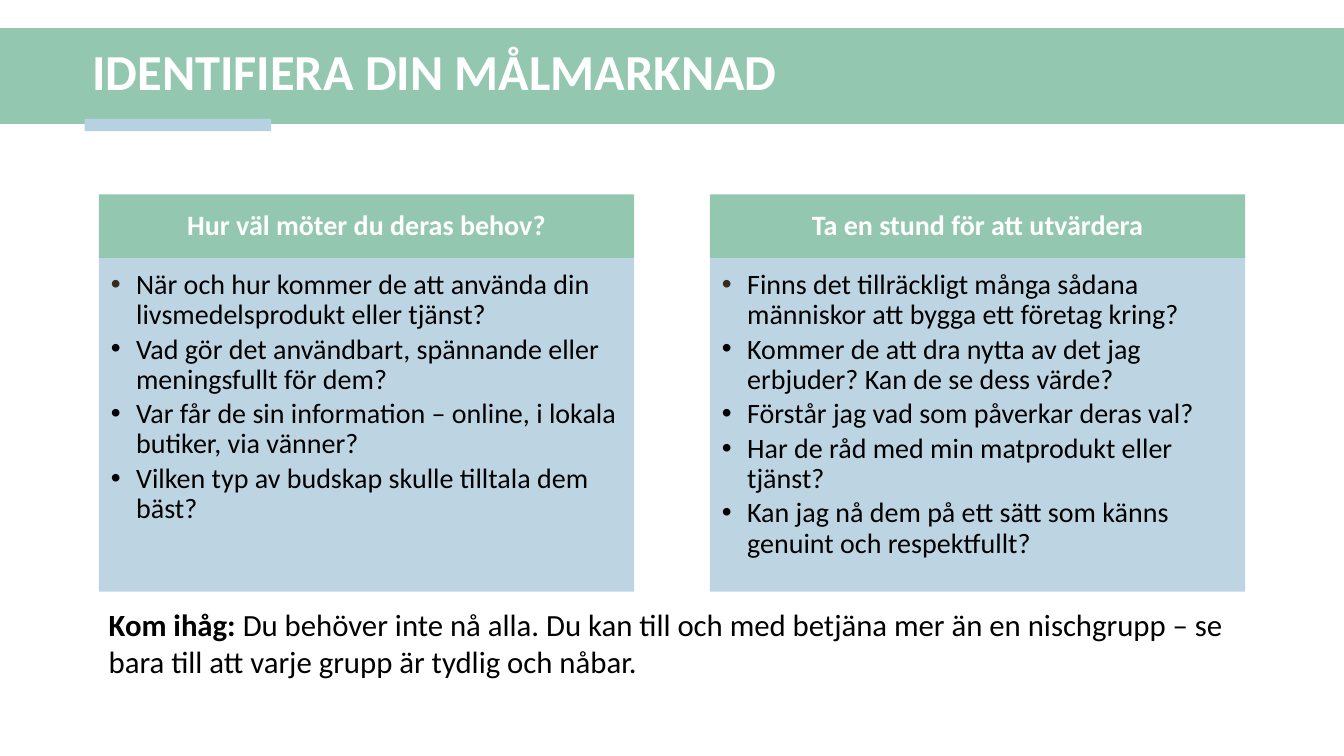
from lxml import etree
from pptx import Presentation
from pptx.dml.color import RGBColor
from pptx.enum.shapes import MSO_SHAPE
from pptx.enum.text import MSO_ANCHOR, PP_ALIGN
from pptx.oxml.ns import qn
from pptx.util import Inches, Pt

RECTANGLE = MSO_SHAPE.RECTANGLE
TOP, MIDDLE = MSO_ANCHOR.TOP, MSO_ANCHOR.MIDDLE
LEFT, CENTER = PP_ALIGN.LEFT, PP_ALIGN.CENTER

FONT = "Calibri"
GREEN, BLUE, WHITE, BLACK, BROWN = "94C7B0", "B6D1E1", "FFFFFF", "000000", "382B1B"

CARD_LEFT, CARD_TOP, CARD_WIDTH, CARD_STEP = 0.98, 1.93, 5.31, 6.06
HEADING_HEIGHT, BODY_HEIGHT = 0.63, 3.31

CARDS = [
    ("Hur väl möter du deras behov?", [
        "När och hur kommer de att använda din livsmedelsprodukt eller tjänst?",
        "Vad gör det användbart, spännande eller meningsfullt för dem?",
        "Var får de sin information – online, i lokala butiker, via vänner?",
        "Vilken typ av budskap skulle tilltala dem bäst?",
    ]),
    ("Ta en stund för att utvärdera", [
        "Finns det tillräckligt många sådana människor att bygga ett företag kring?",
        "Kommer de att dra nytta av det jag erbjuder? Kan de se dess värde?",
        "Förstår jag vad som påverkar deras val?",
        "Har de råd med min matprodukt eller tjänst?",
        "Kan jag nå dem på ett sätt som känns genuint och respektfullt?",
    ]),
]


def color(hex_value):
    return RGBColor.from_string(hex_value)


def add_rectangle(slide, left, top, width, height, fill):
    shape = slide.shapes.add_shape(
        RECTANGLE, Inches(left), Inches(top), Inches(width), Inches(height))
    shape.shadow.inherit = False
    shape.fill.solid()
    shape.fill.fore_color.rgb = color(fill)
    shape.line.fill.background()
    return shape


def add_text_box(slide, left, top, width, height):
    return slide.shapes.add_textbox(
        Inches(left), Inches(top), Inches(width), Inches(height))


def set_frame(shape, anchor, margins):
    frame = shape.text_frame
    frame.word_wrap = True
    frame.vertical_anchor = anchor
    (frame.margin_left, frame.margin_top,
     frame.margin_right, frame.margin_bottom) = map(Inches, margins)
    return frame


def format_run(run, size, text_color, bold=False):
    run.font.name = FONT
    run.font.size = Pt(size)
    run.font.bold = bold
    run.font.color.rgb = color(text_color)


def set_opacity(shape, percent):
    solid_color = shape.fill._xPr.find(qn("a:solidFill"))[0]
    etree.SubElement(solid_color, qn("a:alpha"), val=str(percent * 1000))


def add_bullet(paragraph, bullet_color):
    properties = paragraph._p.get_or_add_pPr()
    properties.set("marL", str(Inches(0.25)))
    properties.set("indent", str(-Inches(0.25)))
    holder = etree.SubElement(properties, qn("a:buClr"))
    etree.SubElement(holder, qn("a:srgbClr"), val=bullet_color)
    etree.SubElement(properties, qn("a:buFont"), typeface="Arial")
    etree.SubElement(properties, qn("a:buChar"), char="•")


def add_title(slide, text):
    add_rectangle(slide, 0, 0.28, 13.33, 0.95, GREEN)
    add_rectangle(slide, 0.84, 1.18, 1.85, 0.12, BLUE)
    box = add_text_box(slide, 0.82, 0.34, 11.93, 0.79)
    frame = set_frame(box, MIDDLE, (0.1, 0.05, 0.1, 0.05))
    frame.text = text
    paragraph = frame.paragraphs[0]
    paragraph.line_spacing = 0.9
    format_run(paragraph.runs[0], 36, WHITE, True)


def add_card(slide, left, heading, questions):
    header = add_rectangle(slide, left, CARD_TOP, CARD_WIDTH, HEADING_HEIGHT, GREEN)
    frame = set_frame(header, MIDDLE, (0.16, 0.09, 0.16, 0.09))
    frame.text = heading
    paragraph = frame.paragraphs[0]
    paragraph.alignment = CENTER
    paragraph.line_spacing = 0.9
    format_run(paragraph.runs[0], 20, WHITE, True)

    body = add_rectangle(
        slide, left, CARD_TOP + HEADING_HEIGHT, CARD_WIDTH, BODY_HEIGHT, BLUE)
    set_opacity(body, 90)
    frame = set_frame(body, TOP, (0.12, 0.12, 0.16, 0.17))
    frame.text = "\n".join(questions)
    for index, paragraph in enumerate(frame.paragraphs):
        add_bullet(paragraph, BLACK if index else BROWN)
        paragraph.alignment = LEFT
        paragraph.line_spacing = 0.9
        paragraph.space_after = Pt(3)
        format_run(paragraph.runs[0], 20, BLACK)


def add_reminder(slide, label, text):
    box = add_text_box(slide, CARD_LEFT, 5.96, CARD_STEP + CARD_WIDTH, 0.84)
    frame = set_frame(box, TOP, (0.1, 0.05, 0.1, 0.05))
    paragraph = frame.paragraphs[0]
    for part, bold in ((label, True), (text, False)):
        run = paragraph.add_run()
        run.text = part
        format_run(run, 22, BLACK, bold)


def main():
    presentation = Presentation()
    presentation.slide_width = Inches(13.33)
    presentation.slide_height = Inches(7.5)
    slide = presentation.slides.add_slide(presentation.slide_layouts[6])
    add_title(slide, "IDENTIFIERA DIN MÅLMARKNAD")
    for index, (heading, questions) in enumerate(CARDS):
        add_card(slide, CARD_LEFT + index * CARD_STEP, heading, questions)
    add_reminder(
        slide, "Kom ihåg: ",
        "Du behöver inte nå alla. Du kan till och med betjäna mer än en "
        "nischgrupp – se bara till att varje grupp är tydlig och nåbar.")
    presentation.save("out.pptx")


if __name__ == "__main__":
    main()
